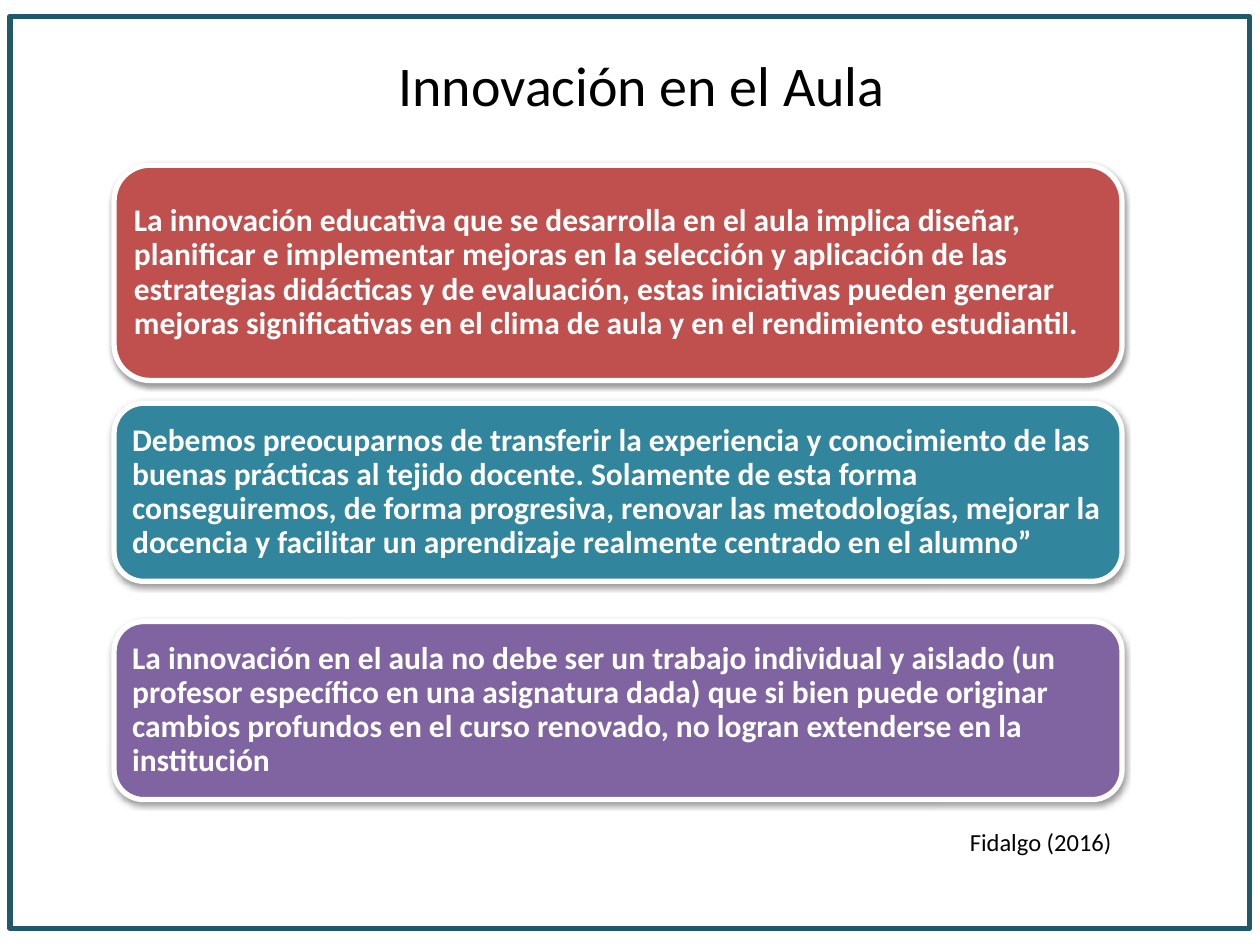
from lxml import etree
from pptx import Presentation, util as u
from pptx.dml.color import RGBColor
from pptx.enum import shapes, text
from pptx.oxml.ns import qn

COLORS = {
    "frame": "215968",
    "red": "C0504D",
    "teal": "31859C",
    "purple": "8064A2",
    "white": "FFFFFF",
    "black": "000000",
}
TITLE = "Innovación en el Aula"
CREDIT = "Fidalgo (2016)"
IDEAS = [
    ("red", 3.33, 4.34,
     "La innovación educativa que se desarrolla en el aula implica diseñar, "
     "planificar e implementar mejoras en la selección y aplicación de las "
     "estrategias didácticas y de evaluación, estas iniciativas pueden generar "
     "mejoras significativas en el clima de aula y en el rendimiento estudiantil."),
    ("teal", 8.13, 3.59,
     "Debemos preocuparnos de transferir la experiencia y conocimiento de las "
     "buenas prácticas al tejido docente. Solamente de esta forma "
     "conseguiremos, de forma progresiva, renovar las metodologías, mejorar la "
     "docencia y facilitar un aprendizaje realmente centrado en el alumno”"),
    ("purple", 12.53, 3.59,
     "La innovación en el aula no debe ser un trabajo individual y aislado (un "
     "profesor específico en una asignatura dada) que si bien puede originar "
     "cambios profundos en el curso renovado, no logran extenderse en la "
     "institución"),
]
IDEA_LEFT, IDEA_WIDTH = 2.3, 20.32
IDEA_INSET = 0.19


def rgb(name):
    return RGBColor.from_string(COLORS[name])


def box(left, top, width, height):
    return [u.Cm(v) for v in (left, top, width, height)]


def write(part, content, size, color="black", bold=False, spacing=None, wrap=True,
          align=text.PP_ALIGN.LEFT, anchor=text.MSO_ANCHOR.TOP, inset=None):
    frame = part.text_frame
    frame.word_wrap = wrap
    frame.vertical_anchor = anchor
    if inset is not None:
        frame.margin_left = frame.margin_right = u.Cm(inset)
        frame.margin_top = frame.margin_bottom = u.Cm(inset)
    paragraph = frame.paragraphs[0]
    paragraph.alignment = align
    paragraph.line_spacing = spacing
    run = paragraph.add_run()
    run.text = content
    run.font.name = "Calibri"
    run.font.size = u.Pt(size)
    run.font.bold = bold
    run.font.color.rgb = rgb(color)


def outline(part, color):
    part.shadow.inherit = False
    part.line.color.rgb = rgb(color)
    part.line.width = u.Pt(3)


def drop_shadow(part):
    effects = part._element.spPr.find(qn("a:effectLst"))
    shadow = etree.SubElement(effects, qn("a:outerShdw"), blurRad=str(u.Pt(3.1)),
                              dist=str(u.Pt(1.6)), dir="5400000", rotWithShape="0")
    tint = etree.SubElement(shadow, qn("a:srgbClr"), val=COLORS["black"])
    etree.SubElement(tint, qn("a:alpha"), val="38000")


deck = Presentation()
deck.slide_width, deck.slide_height = u.Cm(25.4), u.Cm(19.05)
slide = deck.slides.add_slide(deck.slide_layouts[6])
preset = shapes.MSO_SHAPE

border = slide.shapes.add_shape(preset.RECTANGLE, *box(0.2, 0.33, 24.99, 18.39))
border.fill.background()
outline(border, "frame")

for color, top, height, statement in IDEAS:
    idea = slide.shapes.add_shape(
        preset.ROUNDED_RECTANGLE, *box(IDEA_LEFT, top, IDEA_WIDTH, height))
    idea.fill.solid()
    idea.fill.fore_color.rgb = rgb(color)
    outline(idea, "white")
    drop_shadow(idea)
    write(idea, statement, 18, color="white", bold=True, spacing=0.9,
          anchor=text.MSO_ANCHOR.MIDDLE, inset=IDEA_INSET)

credit = slide.shapes.add_textbox(*box(19.3, 16.54, 3.63, 1.45))
write(credit, CREDIT, 14, wrap=False)

title = slide.shapes.add_textbox(*box(0.48, 0.89, 24.92, 1.7))
write(title, TITLE, 32, align=text.PP_ALIGN.CENTER)

deck.save("out.pptx")
